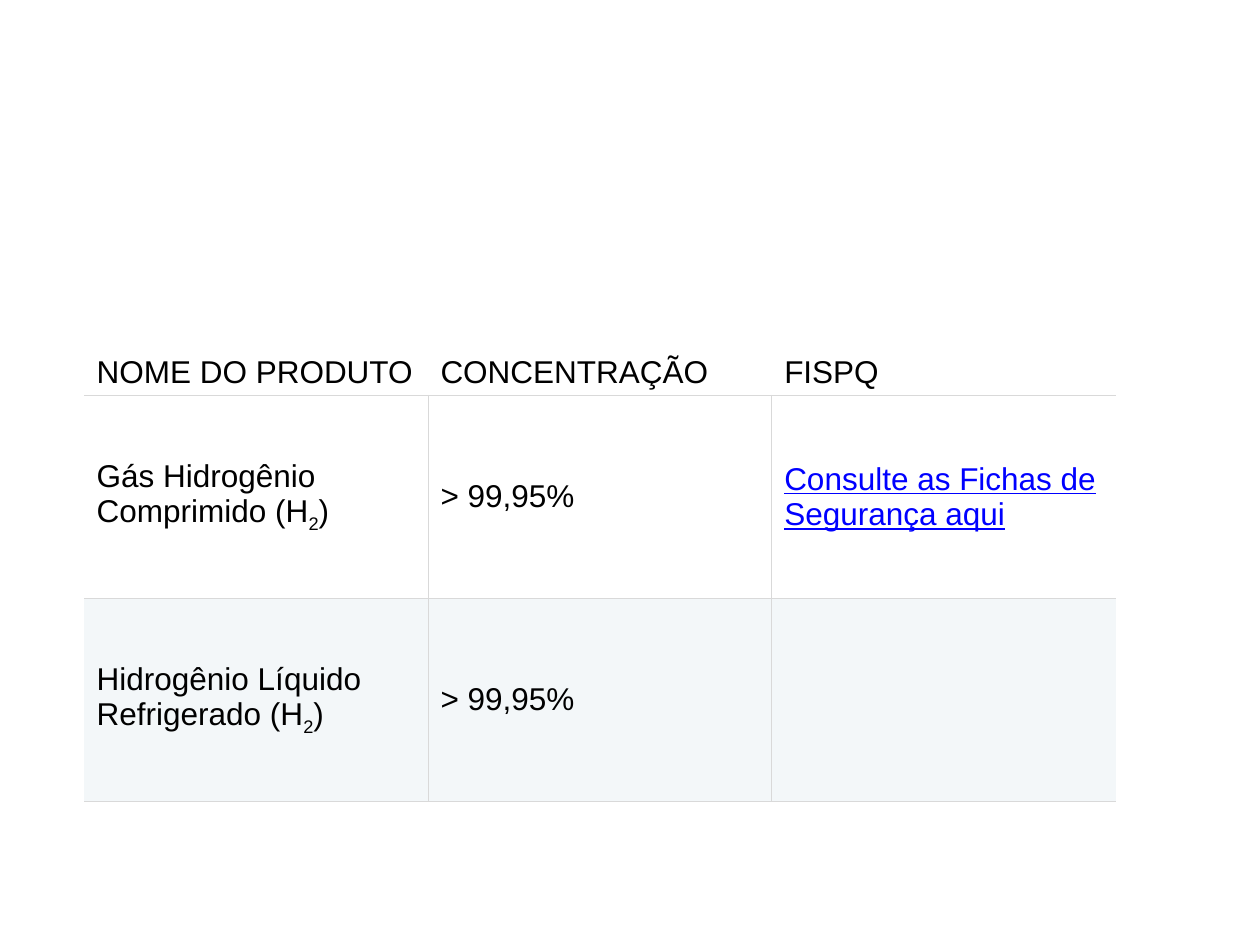
from dataclasses import dataclass

from lxml.etree import SubElement
from pptx import Presentation
from pptx.dml.color import RGBColor
from pptx.enum.text import MSO_ANCHOR
from pptx.oxml.ns import qn
from pptx.util import Cm, Pt


@dataclass(frozen=True)
class Theme:
    font: str = "Arial"
    size: int = 18
    border_width: float = 0.75
    text: str = "000000"
    link: str = "0000FF"
    border: str = "D9D9D9"
    band: str = "F3F7F9"


THEME = Theme()
COLUMN_WIDTH = 6.93
ROW_HEIGHTS = [2.26, 4.09, 4.09]
HEADERS = ["NOME DO PRODUTO", "CONCENTRAÇÃO", "FISPQ"]
PRODUCTS = ["Gás Hidrogênio Comprimido", "Hidrogênio Líquido Refrigerado"]
CONCENTRATION = "> 99,95%"
SAFETY_SHEETS = "Consulte as Fichas de Segurança aqui"


def add_text(paragraph, text, color=THEME.text, underline=False, baseline=0):
    run = paragraph.add_run()
    run.text = text
    font = run.font
    font.name = THEME.font
    font.size = Pt(THEME.size)
    font.color.rgb = RGBColor.from_string(color)
    font.underline = underline
    if baseline:
        run._r.get_or_add_rPr().set("baseline", str(baseline * 1000))


def add_product_name(paragraph, name):
    add_text(paragraph, f"{name} (H")
    add_text(paragraph, "2", baseline=-25)
    add_text(paragraph, ")")


def set_borders(cell, visible_sides):
    properties = cell._tc.get_or_add_tcPr()
    for position, side in enumerate("LRTB"):
        line = SubElement(properties, qn(f"a:ln{side}"))
        properties.insert(position, line)
        if side in visible_sides:
            line.set("w", str(Pt(THEME.border_width)))
            fill = SubElement(line, qn("a:solidFill"))
            SubElement(fill, qn("a:srgbClr"), val=THEME.border)
        else:
            line.set("w", "0")
            SubElement(line, qn("a:noFill"))


def format_cell(cell, row, column):
    is_header = row == 0
    cell.vertical_anchor = MSO_ANCHOR.BOTTOM if is_header else MSO_ANCHOR.MIDDLE
    cell.margin_left = cell.margin_right = cell.margin_top = Cm(0.25)
    cell.margin_bottom = Cm(0.1 if is_header else 0.25)
    if row == 2:
        cell.fill.solid()
        cell.fill.fore_color.rgb = RGBColor.from_string(THEME.band)
    else:
        cell.fill.background()
    sides = "B"
    if not is_header:
        sides += "T"
        sides += "L" if column > 0 else ""
        sides += "R" if column < len(HEADERS) - 1 else ""
    set_borders(cell, sides)


def add_product_table(slide):
    frame = slide.shapes.add_table(
        len(ROW_HEIGHTS), len(HEADERS), Cm(1.7), Cm(5.71),
        Cm(COLUMN_WIDTH * len(HEADERS)), Cm(sum(ROW_HEIGHTS)))
    table = frame.table
    table.first_row = False
    table.horz_banding = False
    for column in table.columns:
        column.width = Cm(COLUMN_WIDTH)
    for row, height in zip(table.rows, ROW_HEIGHTS):
        row.height = Cm(height)
    for row in range(len(ROW_HEIGHTS)):
        for column in range(len(HEADERS)):
            format_cell(table.cell(row, column), row, column)
    return table


def fill_product_table(table):
    def paragraph_at(row, column):
        return table.cell(row, column).text_frame.paragraphs[0]

    for column, header in enumerate(HEADERS):
        add_text(paragraph_at(0, column), header)
    for row, product in enumerate(PRODUCTS, start=1):
        add_product_name(paragraph_at(row, 0), product)
        add_text(paragraph_at(row, 1), CONCENTRATION)
    add_text(paragraph_at(1, 2), SAFETY_SHEETS, color=THEME.link, underline=True)


def main():
    presentation = Presentation()
    presentation.slide_width = Cm(25.4)
    presentation.slide_height = Cm(19.05)
    slide = presentation.slides.add_slide(presentation.slide_layouts[6])
    fill_product_table(add_product_table(slide))
    presentation.save("out.pptx")


if __name__ == "__main__":
    main()
